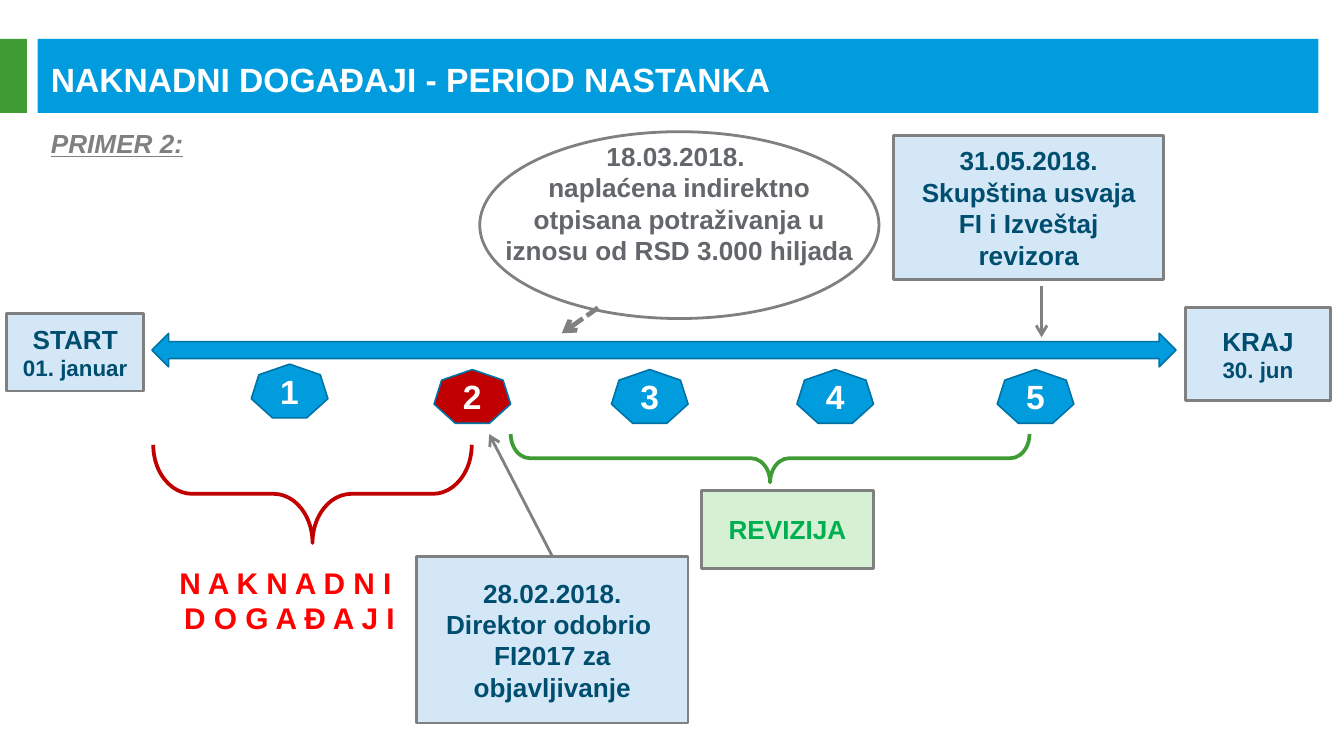
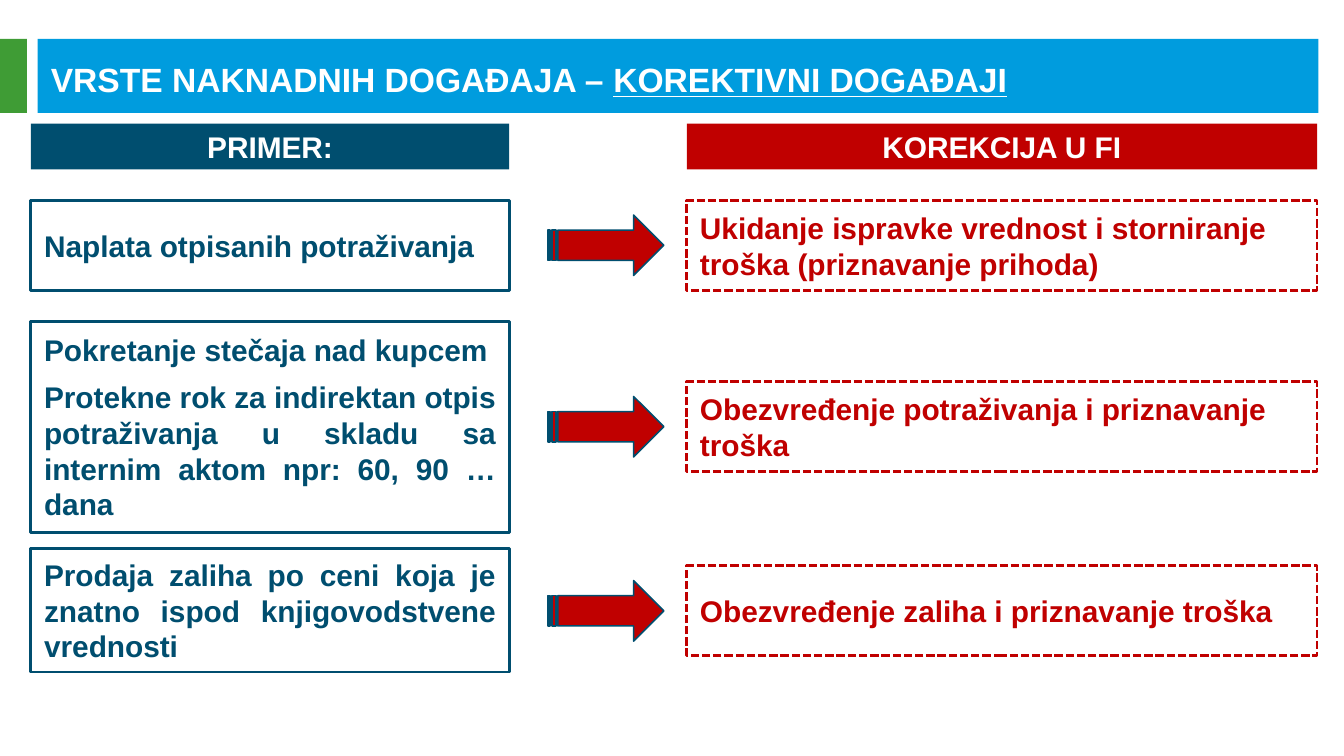
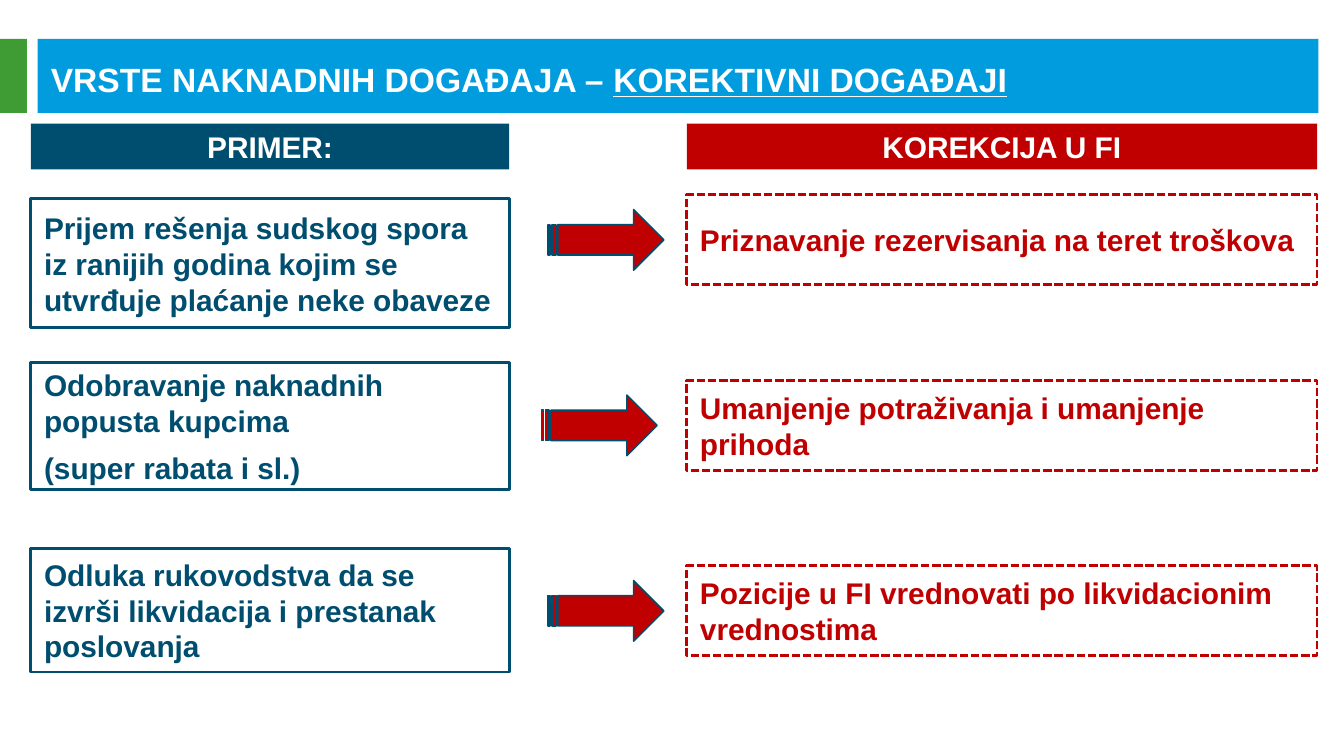
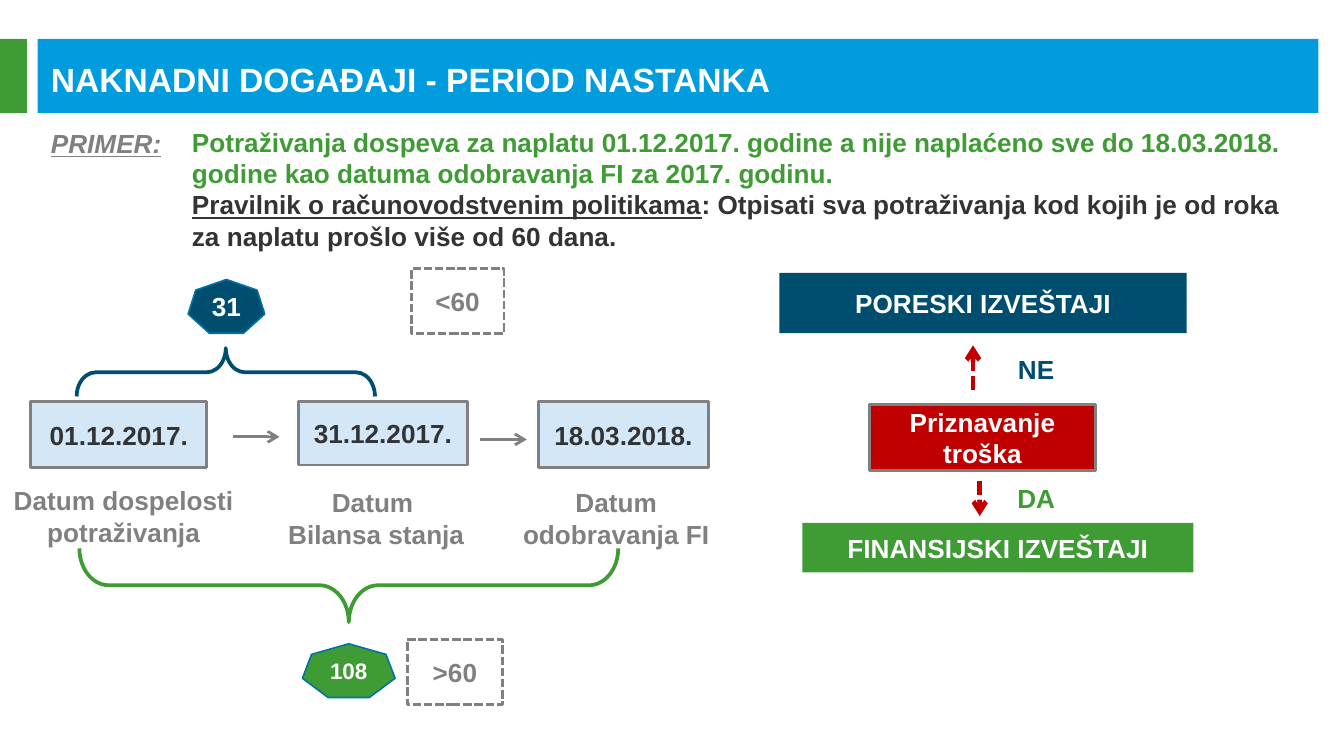
from dataclasses import dataclass
from typing import NamedTuple, Optional

from lxml import etree
from pptx import Presentation
from pptx import util as u
from pptx.dml.color import RGBColor
from pptx.enum import dml, shapes, text
from pptx.oxml import ns

FONT = "Arial"
COLORS = {
    "white": "FFFFFF", "blue": "009CDE", "edge": "0073A4", "navy": "004E6F",
    "pale": "D4E7F7", "green": "3F9C35", "mint": "D5F0D2", "emerald": "00B050",
    "crimson": "C00000", "red": "FF0000", "gray": "808080", "slate": "63666A",
    "ink": "323335",
}
SHAPE = shapes.MSO_SHAPE
LEFT, CENTER, JUSTIFY = (
    text.PP_ALIGN.LEFT, text.PP_ALIGN.CENTER, text.PP_ALIGN.JUSTIFY)


# Descriptions of the repeated elements
class Area(NamedTuple):
    left: float
    top: float
    width: float
    height: float

    def lengths(self) -> list:
        return [u.Inches(value) for value in self]


class Span(NamedTuple):
    text: str
    color: str = "navy"
    size: float = 14
    italic: bool = False
    underline: bool = False


class Para(NamedTuple):
    spans: tuple
    align: int = CENTER
    after: float = 0


@dataclass(frozen=True)
class Look:
    fill: Optional[str] = None
    line: Optional[str] = None
    width: float = 1.5
    dashed: bool = False


class Row(NamedTuple):
    example: list
    example_top: float
    example_height: float
    correction: str
    correction_top: float
    arrow_left: float = 4.08


CARD = Look("pale", "gray")
DASHED_CARD = Look(None, "gray", dashed=True)
EXAMPLE = Look(None, "navy")
CORRECTION = Look(None, "crimson", dashed=True)


def rgb(name: str) -> RGBColor:
    return RGBColor.from_string(COLORS[name])


def lines(*texts: str, color: str = "navy", size: float = 14,
          align: int = CENTER, after: float = 0) -> list:
    """One paragraph of a single span for each text."""
    return [Para((Span(item, color, size),), align, after) for item in texts]


# Drawing functions
def write(box, paras: list) -> None:
    frame = box.text_frame
    frame.word_wrap = True
    frame.vertical_anchor = text.MSO_ANCHOR.MIDDLE
    for index, item in enumerate(paras):
        para = frame.add_paragraph() if index else frame.paragraphs[0]
        para.alignment = item.align
        para.space_after = u.Pt(item.after)
        for span in item.spans:
            run = para.add_run()
            run.text = span.text
            run.font.name = FONT
            run.font.bold = True
            run.font.size = u.Pt(span.size)
            run.font.italic = span.italic
            run.font.underline = span.underline
            run.font.color.rgb = rgb(span.color)


def add_label(page, area: Area, paras: list) -> None:
    write(page.shapes.add_textbox(*area.lengths()), paras)


def set_line(line, color: str, width: float, dashed: bool) -> None:
    line.color.rgb = rgb(color)
    line.width = u.Pt(width)
    if dashed:
        line.dash_style = dml.MSO_LINE.SQUARE_DOT


def add_box(page, area: Area, look: Look, paras: Optional[list] = None,
            kind: int = SHAPE.RECTANGLE):
    box = page.shapes.add_shape(kind, *area.lengths())
    box.shadow.inherit = False
    if look.fill:
        box.fill.solid()
        box.fill.fore_color.rgb = rgb(look.fill)
    else:
        box.fill.background()
    if look.line:
        set_line(box.line, look.line, look.width, look.dashed)
    else:
        box.line.fill.background()
    if paras:
        write(box, paras)
    return box


def add_heptagon(page, left: float, top: float, label: str, fill: str,
                 size: float = 18, width: float = 0.57) -> None:
    add_box(page, Area(left, top, width, 0.4), Look(fill, "edge", 0.85),
            lines(label, color="white", size=size), SHAPE.HEPTAGON)


def add_brace(page, area: Area, color: str, rotation: int) -> None:
    """The area is the one before turning; 90 points down, 270 up."""
    brace = add_box(page, area, Look(None, color, 2), kind=SHAPE.RIGHT_BRACE)
    brace.adjustments[0] = 0.396
    brace.rotation = rotation


def add_arrow(page, start: tuple, end: tuple, color: str = "gray",
              width: float = 1.5, dashed: bool = False):
    points = [u.Inches(value) for value in start + end]
    arrow = page.shapes.add_connector(shapes.MSO_CONNECTOR.STRAIGHT, *points)
    set_line(arrow.line, color, width, dashed)
    properties = arrow._element.spPr
    tail = etree.SubElement(properties.find(ns.qn("a:ln")), ns.qn("a:tailEnd"))
    tail.set("type", "arrow")
    etree.SubElement(properties, ns.qn("a:effectLst"))
    return arrow


def add_page(deck, *title: Span):
    """A page with the green tab, the blue band and its title."""
    page = deck.slides.add_slide(deck.slide_layouts[6])
    add_box(page, Area(0.28, 0.29, 9.53, 0.55), Look("blue"))
    add_box(page, Area(0, 0.29, 0.2, 0.55), Look("green"))
    add_label(page, Area(0.28, 0.3, 9.65, 0.58), [Para(title, LEFT)])
    return page


def add_period_page(deck, heading: str):
    page = add_page(deck, Span("NAKNADNI DOGAĐAJI - PERIOD NASTANKA", "white", 18))
    span = Span(heading, "gray", italic=True, underline=True)
    add_label(page, Area(0.28, 0.88, 1.22, 0.37), [Para((span,), LEFT)])
    return page


# Slide 1: timeline
def build_timeline(deck) -> None:
    page = add_period_page(deck, "PRIMER 2:")

    # Time axis with its ends and numbered marks
    for area, name, date in (
            (Area(0.05, 2.33, 1.02, 0.58), "START", "01. januar"),
            (Area(8.82, 2.29, 1.08, 0.69), "KRAJ", "30. jun")):
        add_box(page, area, CARD, lines(name) + lines(date, size=12))
    add_box(page, Area(1.13, 2.48, 7.62, 0.25), Look("blue", "edge", 0.85),
            kind=SHAPE.LEFT_RIGHT_ARROW)
    marks = ((1.87, 2.71), (3.23, 2.75), (4.55, 2.75), (5.93, 2.75), (7.42, 2.75))
    for number, (left, top) in enumerate(marks, 1):
        add_heptagon(page, left, top, str(number),
                     "crimson" if number == 2 else "blue")

    # Subsequent events and audit periods
    add_brace(page, Area(1.96, 2.49, 0.73, 2.37), "crimson", 90)
    add_label(page, Area(1.21, 4.18, 1.89, 0.57),
              lines("N A K N A D N I ", "D O G A Đ A J I", color="red", size=16))
    add_brace(page, Area(5.55, 1.48, 0.36, 3.86), "green", 90)
    add_box(page, Area(5.22, 3.65, 1.28, 0.58), Look("mint", "gray"),
            lines("REVIZIJA", color="emerald"))

    # Events tied to the axis
    approval = add_box(
        page, Area(3.1, 4.14, 2.02, 1.24), CARD,
        lines("28.02.2018.", "Direktor odobrio ", "FI2017 za objavljivanje"))
    add_arrow(page, (4.11, 4.14), (3.64, 3.23)).begin_connect(approval, 0)
    add_box(page, Area(6.65, 1.01, 2.01, 1.07), CARD,
            lines("31.05.2018.", "Skupština usvaja FI i Izveštaj revizora"))
    add_arrow(page, (7.75, 2.13), (7.75, 2.51))
    add_arrow(page, (4.45, 2.29), (4.18, 2.48), width=2.5, dashed=True)
    add_label(page, Area(3.57, 0.98, 2.97, 1.06), lines(
        "18.03.2018. ",
        "naplaćena indirektno otpisana potraživanja u iznosu od RSD 3.000 hiljada",
        color="slate"))
    add_box(page, Area(3.57, 0.98, 2.97, 1.39), Look(None, "gray"),
            kind=SHAPE.OVAL)


# Slides 2 and 3: examples and their corrections
def example(*texts: str, align: int = LEFT) -> list:
    return lines(*texts, size=16, align=align, after=6)


def build_corrections(deck, rows: list) -> None:
    page = add_page(deck, Span("VRSTE NAKNADNIH DOGAĐAJA – ", "white", 18),
                    Span("KOREKTIVNI DOGAĐAJI", "white", 18, underline=True))
    left, left_width, right, right_width = 0.23, 3.56, 5.11, 4.69
    for start, width, fill, heading in (
            (left, left_width, "navy", "PRIMER:"),
            (right, right_width, "crimson", "KOREKCIJA U FI")):
        add_box(page, Area(start, 0.92, width, 0.34), Look(fill),
                lines(heading, color="white", size=16, after=6))
    for row in rows:
        add_box(page, Area(left, row.example_top, left_width, row.example_height),
                EXAMPLE, row.example)
        add_box(page, Area(row.arrow_left, row.correction_top + 0.11, 0.86, 0.45),
                Look("crimson", "navy", 0.85), kind=SHAPE.STRIPED_RIGHT_ARROW)
        add_box(page, Area(right, row.correction_top, right_width, 0.67), CORRECTION,
                lines(row.correction, color="crimson", size=16, align=LEFT, after=6))


RECEIVABLE_ROWS = [
    Row(example("Naplata otpisanih potraživanja"), 1.49, 0.67,
        "Ukidanje ispravke vrednost i storniranje troška (priznavanje prihoda)", 1.49),
    Row(example("Pokretanje stečaja nad kupcem")
        + example("Protekne rok za indirektan otpis potraživanja u skladu sa "
                  "internim aktom npr: 60, 90 … dana", align=JUSTIFY), 2.39, 1.57,
        "Obezvređenje potraživanja i priznavanje troška", 2.84),
    Row(example("Prodaja zaliha po ceni koja je znatno ispod knjigovodstvene "
                "vrednosti", align=JUSTIFY), 4.08, 0.92,
        "Obezvređenje zaliha i priznavanje troška", 4.21),
]
DECISION_ROWS = [
    Row(example("Prijem rešenja sudskog spora iz ranijih godina kojim se "
                "utvrđuje plaćanje neke obaveze"), 1.48, 0.96,
        "Priznavanje rezervisanja na teret troškova", 1.45),
    Row(example("Odobravanje naknadnih popusta kupcima", "(super rabata i sl.)"),
        2.7, 0.94, "Umanjenje potraživanja i umanjenje prihoda", 2.83, 4.03),
    Row(example("Odluka rukovodstva da se izvrši likvidacija i prestanak "
                "poslovanja"), 4.08, 0.92,
        "Pozicije u FI vrednovati po likvidacionim vrednostima", 4.21),
]


# Slide 4: overdue receivable
def build_overdue(deck) -> None:
    page = add_period_page(deck, "PRIMER:")
    policy = Para((
        Span("Pravilnik o računovodstvenim politikama", "ink", underline=True),
        Span(": Otpisati sva potraživanja kod kojih je od roka za naplatu "
             "prošlo više od 60 dana.", "ink")), LEFT)
    add_label(page, Area(1.33, 0.93, 8.46, 0.95), lines(
        "Potraživanja dospeva za naplatu 01.12.2017. godine a nije naplaćeno sve "
        "do 18.03.2018. godine kao datuma odobravanja FI za 2017. godinu.",
        color="green", align=LEFT) + [policy])

    # Dates, their captions and the arrows between them
    for area, date in ((Area(0.23, 2.99, 1.31, 0.49), "01.12.2017."),
                       (Area(2.22, 2.99, 1.26, 0.47), "31.12.2017."),
                       (Area(4.01, 2.99, 1.26, 0.49), "18.03.2018.")):
        add_box(page, area, CARD, lines(date, color="ink"))
    for area, caption in (
            (Area(-0.02, 3.6, 1.88, 0.48), ["Datum dospelosti potraživanja"]),
            (Area(1.86, 3.6, 1.88, 0.51), ["Datum ", "Bilansa stanja"]),
            (Area(3.74, 3.62, 1.69, 0.47), ["Datum odobravanja FI"])):
        add_label(page, area, lines(*caption, color="gray"))
    for left, top in ((1.73, 3.25), (3.57, 3.27)):
        add_arrow(page, (left, top), (left + 0.35, top))

    # Days elapsed
    add_brace(page, Area(1.5, 1.66, 0.36, 2.22), "navy", 270)
    add_heptagon(page, 1.4, 2.08, "31", "navy", 14)
    add_box(page, Area(3.06, 2, 0.69, 0.48), DASHED_CARD, lines("<60", color="gray"))
    add_brace(page, Area(2.32, 2.35, 0.55, 4.01), "green", 90)
    add_heptagon(page, 2.25, 4.79, "108", "green", 12, 0.69)
    add_box(page, Area(3.03, 4.76, 0.71, 0.48), DASHED_CARD, lines(">60", color="gray"))

    # Where the expense is recognised
    for area, look, label, after in (
            (Area(5.8, 2.03, 3.03, 0.45), Look("navy"), "PORESKI IZVEŠTAJI", 0),
            (Area(6.47, 3.01, 1.68, 0.49), Look("crimson", "gray"),
             "Priznavanje troška", 0),
            (Area(5.97, 3.89, 2.91, 0.37), Look("green"), "FINANSIJSKI IZVEŠTAJI", 6)):
        add_box(page, area, look, lines(label, color="white", after=after))
    for left, start, end, top, answer, color in (
            (7.24, 2.9, 2.57, 2.58, "NE", "navy"),
            (7.29, 3.58, 3.84, 3.54, "DA", "green")):
        add_arrow(page, (left, start), (left, end), "crimson", 2.5, True)
        add_label(page, Area(7.44, top, 0.54, 0.33), lines(answer, color=color))


def main() -> None:
    deck = Presentation()
    deck.slide_width = u.Inches(10)
    deck.slide_height = deck.slide_width * 9 // 16
    build_timeline(deck)
    build_corrections(deck, RECEIVABLE_ROWS)
    build_corrections(deck, DECISION_ROWS)
    build_overdue(deck)
    deck.save("out.pptx")


if __name__ == "__main__":
    main()
